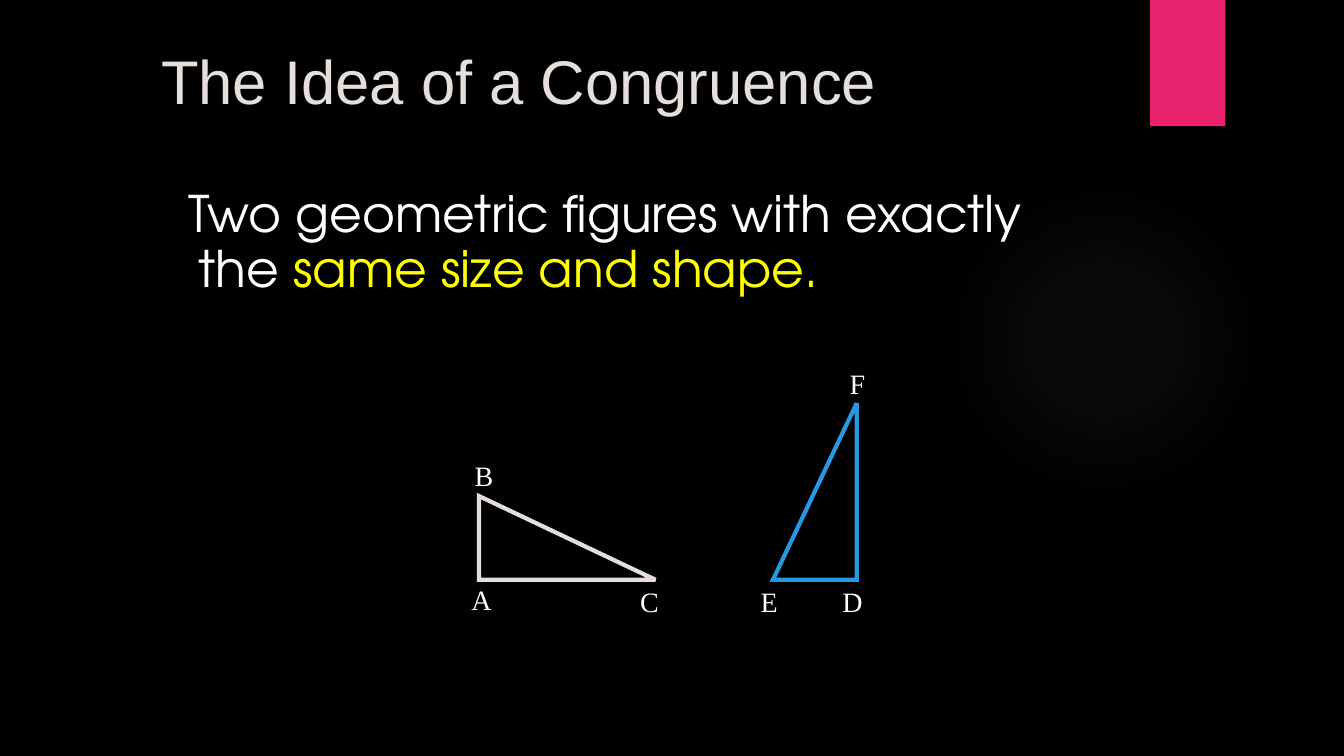
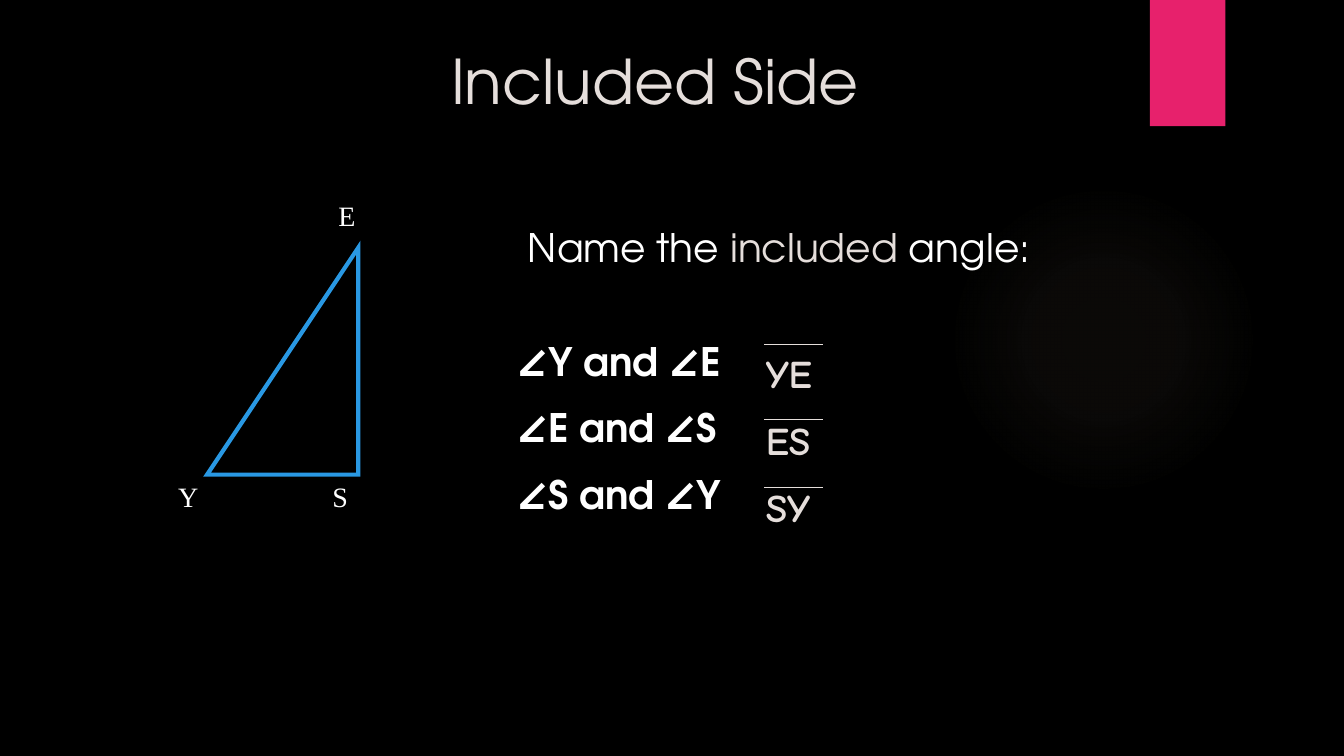
import pptx
import pptx.dml.color
import pptx.enum.shapes
import pptx.enum.text
import pptx.oxml
import pptx.oxml.ns
import pptx.util
from lxml import etree

Cm = pptx.util.Cm
Pt = pptx.util.Pt
RGBColor = pptx.dml.color.RGBColor
PP_ALIGN = pptx.enum.text.PP_ALIGN
MSO_ANCHOR = pptx.enum.text.MSO_ANCHOR
MSO_SHAPE = pptx.enum.shapes.MSO_SHAPE
qn = pptx.oxml.ns.qn

BLACK = RGBColor(0x00, 0x00, 0x00)
WHITE = RGBColor(0xFF, 0xFF, 0xFF)
YELLOW = RGBColor(0xFF, 0xFF, 0x00)
CREAM = RGBColor(0xE5, 0xDE, 0xDB)
BLUE = RGBColor(0x29, 0x98, 0xE3)
PINK = RGBColor(0xE7, 0x21, 0x6C)
GLOW = RGBColor(0x96, 0x80, 0x71)

BODY_FONT = "TeX Gyre Adventor"
TITLE_SIZE = 44
GLOW_STOPS = [(0, 7), (36, 6), (69, 0)]  # position %, opacity %


def add_shape(slide, preset, left, top, width, height):
    shape = slide.shapes.add_shape(preset, Cm(left), Cm(top), Cm(width), Cm(height))
    shape.shadow.inherit = False
    return shape


def add_glow(slide):
    glow = add_shape(slide, MSO_SHAPE.OVAL, 23.9, 4.65, 7.82, 7.82)
    stops = "".join(
        f'<a:gs pos="{position * 1000}"><a:srgbClr val="{GLOW}">'
        f'<a:alpha val="{opacity * 1000}"/></a:srgbClr></a:gs>'
        for position, opacity in GLOW_STOPS
    )
    gradient = pptx.oxml.parse_xml(
        f'<a:gradFill {pptx.oxml.ns.nsdecls("a")}><a:gsLst>{stops}</a:gsLst>'
        '<a:path path="circle"><a:fillToRect l="50000" t="50000" r="50000" b="50000"/>'
        "</a:path></a:gradFill>"
    )
    glow.element.spPr.find(qn("a:prstGeom")).addnext(gradient)
    glow.line.fill.background()


def add_band(slide):
    band = add_shape(slide, MSO_SHAPE.RECTANGLE, 28.98, 0, 1.9, 3.18)
    band.fill.solid()
    band.fill.fore_color.rgb = PINK
    band.line.fill.background()


def add_text_frame(slide, left, top, width, height, wrap=True):
    box = slide.shapes.add_textbox(Cm(left), Cm(top), Cm(width), Cm(height))
    box.text_frame.word_wrap = wrap
    return box.text_frame


def style_paragraph(paragraph, size, color, font=BODY_FONT, bold=False, margin=0, indent=0):
    properties = paragraph._p.get_or_add_pPr()
    properties.set("marL", str(Cm(margin)))
    properties.set("indent", str(Cm(indent)))
    paragraph.font.name = font
    paragraph.font.size = Pt(size)
    paragraph.font.bold = bold
    paragraph.font.color.rgb = color


def add_colored_runs(paragraph, runs):
    for text, color in runs:
        run = paragraph.add_run()
        run.text = text
        run.font.color.rgb = color


def add_title(slide, text, font, alignment):
    frame = add_text_frame(slide, 3.81, 0.42, 25.4, 3.18)
    frame.vertical_anchor = MSO_ANCHOR.MIDDLE
    paragraph = frame.paragraphs[0]
    paragraph.text = text
    paragraph.alignment = alignment
    style_paragraph(paragraph, TITLE_SIZE, CREAM, font)


def add_label(slide, text, left, top, width=1.1, size=20, color=WHITE,
              font="Times New Roman", bold=False):
    frame = add_text_frame(slide, left, top, width, 1.1, wrap=False)
    frame.paragraphs[0].text = text
    style_paragraph(frame.paragraphs[0], size, color, font, bold)


def add_right_triangle(slide, left, top, base, height, color, right_angle_at_right=False):
    """Draw a triangle in the visible box given; turning moves its right angle to the right."""
    if right_angle_at_right:
        shift = (height - base) / 2
        triangle = add_shape(slide, MSO_SHAPE.RIGHT_TRIANGLE,
                             left - shift, top + shift, height, base)
        triangle.rotation = 270
    else:
        triangle = add_shape(slide, MSO_SHAPE.RIGHT_TRIANGLE, left, top, base, height)
    triangle.fill.background()
    triangle.line.color.rgb = color
    triangle.line.width = Pt(3)
    outline = triangle.element.spPr.find(qn("a:ln"))
    etree.SubElement(outline, qn("a:miter"), lim="800000")


def add_overline(slide, left, top, width):
    line = slide.shapes.add_connector(pptx.enum.shapes.MSO_CONNECTOR.STRAIGHT,
                                      Cm(left), Cm(top), Cm(left + width), Cm(top))
    line.line.color.rgb = CREAM
    line.line.width = Pt(0.75)
    etree.SubElement(line.element.spPr, qn("a:effectLst"))


def add_slide(presentation, title, title_font, title_alignment):
    slide = presentation.slides.add_slide(presentation.slide_layouts[6])
    add_glow(slide)
    add_band(slide)
    add_title(slide, title, title_font, title_alignment)
    return slide


def build_congruence_slide(presentation):
    slide = add_slide(presentation, "The Idea of a Congruence", "Arial", PP_ALIGN.LEFT)

    definition = add_text_frame(slide, 3.81, 4.65, 22.66, 1.9).paragraphs[0]
    definition.line_spacing = 0.9
    style_paragraph(definition, 36, WHITE, margin=0.95, indent=-0.25)
    add_colored_runs(definition, [
        ("Two geometric figures with exactly the ", WHITE),
        ("same size and shape.", YELLOW),
    ])

    add_right_triangle(slide, 12.07, 12.5, 4.45, 2.11, CREAM)
    add_right_triangle(slide, 19.48, 10.16, 2.11, 4.45, BLUE, right_angle_at_right=True)
    for vertex, left, top in [
        ("A", 11.63, 14.55), ("B", 11.71, 11.43), ("C", 15.88, 14.6),
        ("D", 20.98, 14.6), ("E", 18.92, 14.6), ("F", 21.16, 9.1),
    ]:
        add_label(slide, vertex, left, top)


def build_included_side_slide(presentation):
    slide = add_slide(presentation, "Included Side", BODY_FONT, PP_ALIGN.CENTER)

    frame = add_text_frame(slide, 12.5, 5.51, 13.77, 9.2)
    question = frame.paragraphs[0]
    style_paragraph(question, 28, WHITE, margin=0.55)
    add_colored_runs(question, [
        ("Name the ", WHITE), ("included", CREAM), (" angle:", WHITE),
    ])
    for angles, space_before in [("∠Y and ∠E", 47.4), ("∠E and ∠S", 14), ("∠S and ∠Y", 14)]:
        paragraph = frame.add_paragraph()
        paragraph.text = angles
        paragraph.space_before = Pt(space_before)
        style_paragraph(paragraph, 28, WHITE, bold=True, margin=0.28)

    add_right_triangle(slide, 5.22, 6.24, 3.81, 5.72, BLUE, right_angle_at_right=True)
    for vertex, left, top in [("S", 8.13, 11.96), ("Y", 4.24, 11.96), ("E", 8.28, 4.87)]:
        add_label(slide, vertex, left, top)

    for side, label_top, overline_top in [
        ("YE", 8.68, 8.68), ("ES", 10.37, 10.58), ("SY", 12.06, 12.28),
    ]:
        add_label(slide, side, 19.05, label_top, 1.85, 28, CREAM, "Comic Neue", True)
        add_overline(slide, 19.26, overline_top, 1.48)


def main():
    presentation = pptx.Presentation()
    presentation.slide_width = Cm(33.87)
    presentation.slide_height = Cm(19.05)
    background = presentation.slide_master.background.fill
    background.solid()
    background.fore_color.rgb = BLACK
    build_congruence_slide(presentation)
    build_included_side_slide(presentation)
    presentation.save("out.pptx")


if __name__ == "__main__":
    main()
